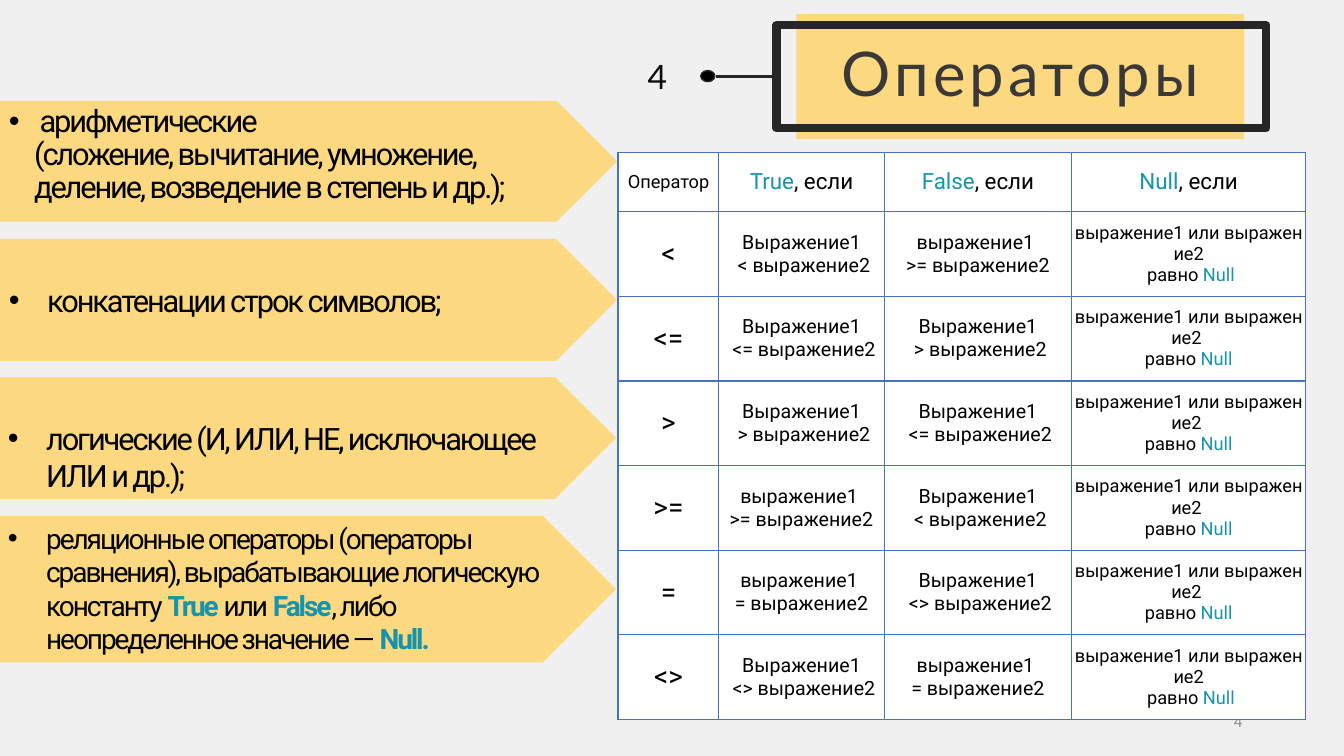
"""Builds the slide about operators: four category arrows and a comparison table."""
from dataclasses import dataclass

from lxml import etree
from pptx import Presentation
from pptx.dml.color import RGBColor
from pptx.enum import shapes, text
from pptx.oxml import ns
from pptx.util import Inches, Pt

NBSP = chr(160)


@dataclass(frozen=True)
class Theme:
    """Colours, fonts and type sizes."""
    back: str = "F0F0F0"
    accent: str = "FCD880"
    ink: str = "000000"
    title: str = "3B3838"
    dark: str = "262626"
    number: str = "0D0D0D"
    muted: str = "8C8C8C"
    keyword: str = "1794AC"
    border: str = "4472C4"
    cell: str = "FFFFFF"
    head_font: str = "Lato"
    body_font: str = "Roboto"
    foot_font: str = "Calibri"
    title_size: float = 44
    number_size: float = 24
    body_size: float = 22
    small_size: float = 20
    operator_size: float = 20
    head_size: float = 16
    cell_size: float = 14
    null_size: float = 13
    foot_size: float = 12


@dataclass(frozen=True)
class Box:
    """Position and size in inches."""
    left: float
    top: float
    width: float
    height: float

    def emu(self) -> tuple:
        """Return the box as lengths."""
        return tuple(map(Inches, (self.left, self.top, self.width, self.height)))


@dataclass(frozen=True)
class Category:
    """An arrow with one bulleted operator category."""
    box: Box
    words: str
    size: float
    indent: float = 0.38
    inset: float = 0.05
    anchor: text.MSO_ANCHOR = text.MSO_ANCHOR.TOP
    leading: float = 1


@dataclass(frozen=True)
class Comparison:
    """A table row: operator, its negation and the first words of both cases."""
    operator: str
    negation: str
    true_word: str
    false_word: str
    late_space: bool = True


T = Theme()
UPPER, LOWER = "Выражение1", "выражение1"
CATEGORIES = [
    Category(Box(-0.01, 1, 6.13, 1.2),
             " арифметические\v(сложение, вычитание, умножение, деление, возведение в степень и др.);",
             T.body_size, indent=0.25, leading=0.9),
    Category(Box(-0.01, 2.37, 6.13, 1.21), "конкатенации строк символов;",
             T.body_size, anchor=text.MSO_ANCHOR.MIDDLE),
    Category(Box(-0.02, 3.74, 6.13, 1.21),
             "логические (И, ИЛИ, НЕ, исключающее ИЛИ и др.);", T.body_size, inset=0.42),
    Category(Box(-0.02, 5.12, 6.13, 1.45),
             "реляционные операторы (операторы сравнения), вырабатывающие логическую константу "
             "|True| или |False|, либо неопределенное значение — |Null.|", T.small_size),
]
COMPARISONS = [
    Comparison("<", ">=", UPPER, LOWER, False),
    Comparison("<=", ">", UPPER, UPPER),
    Comparison(">", "<=", UPPER, UPPER),
    Comparison(">=", "<", LOWER, UPPER),
    Comparison("=", "<>", LOWER, UPPER),
    Comparison("<>", "=", UPPER, LOWER, False),
]
TABLE_BOX = Box(6.13, 1.51, 6.82, 5.63)
COLUMNS = [1, 1.64, 1.86, 2.32]
ROWS = [0.59] + [0.84] * len(COMPARISONS)


def rgb(value: str) -> RGBColor:
    """Turn a hex string into a colour."""
    return RGBColor.from_string(value)


def write(p, words: str, size: float, font: str = T.body_font, color: str = T.ink,
          align=text.PP_ALIGN.CENTER, spacing: int = 0, bold: bool = False) -> None:
    """Fill a paragraph; words between bars become keywords."""
    p.alignment = align
    p.font.size, p.font.name, p.font.color.rgb = Pt(size), font, rgb(color)
    if spacing:
        p._p.pPr.find(ns.qn("a:defRPr")).set("spc", str(spacing))
    for index, piece in enumerate(words.split("|")):
        for number, line in enumerate(piece.split("\v")):
            if number:
                p.add_line_break()
            if line:
                r = p.add_run()
                r.text = line
                if index % 2:
                    r.font.color.rgb = rgb(T.keyword)
                    r.font.bold = bold or None


def add_block(s, kind, box: Box, fill: str = "", line: str = "", weight: float = 0):
    """Add a flat preset shape."""
    sp = s.shapes.add_shape(kind, *box.emu())
    sp.shadow.inherit = False
    if fill:
        sp.fill.solid()
        sp.fill.fore_color.rgb = rgb(fill)
    else:
        sp.fill.background()
    if line:
        sp.line.color.rgb, sp.line.width = rgb(line), Pt(weight)
    else:
        sp.line.fill.background()
    return sp


def add_label(s, box: Box, words: str, size: float, font: str, color: str, align,
              anchor=text.MSO_ANCHOR.TOP) -> None:
    """Add a wrapped text box."""
    tf = s.shapes.add_textbox(*box.emu()).text_frame
    tf.word_wrap, tf.vertical_anchor = True, anchor
    write(tf.paragraphs[0], words, size, font, color, align)


def add_category(s, item: Category) -> None:
    """Add an arrow with its bullet."""
    tf = add_block(s, shapes.MSO_SHAPE.PENTAGON, item.box, T.accent).text_frame
    tf.word_wrap, tf.vertical_anchor, tf.margin_top = True, item.anchor, Inches(item.inset)
    p = tf.paragraphs[0]
    p.line_spacing = item.leading
    pr = p._p.get_or_add_pPr()
    pr.set("marL", str(Inches(item.indent)))
    pr.set("indent", str(-Inches(item.indent)))
    etree.SubElement(pr, ns.qn("a:buFont")).set("typeface", "Arial")
    etree.SubElement(pr, ns.qn("a:buChar")).set("char", "•")
    write(p, item.words, item.size, align=text.PP_ALIGN.LEFT, spacing=-150, bold=True)


def case(word: str, operator: str) -> list[str]:
    """Return the two lines of a comparison."""
    tail = f"{operator}{NBSP}выражение2"
    return [word, NBSP + tail] if word == UPPER else [word + NBSP, tail]


def null_case(late_space: bool) -> list[str]:
    """Return the two lines of the Null condition."""
    first, second = NBSP.join([LOWER, "или", "выражение2"]), f"равно{NBSP}|Null|"
    return [first + NBSP, second] if late_space else [first, NBSP + second]


def fill_cell(cell, lines: list[str], size: float) -> None:
    """Write, fill and border a table cell."""
    cell.vertical_anchor = text.MSO_ANCHOR.MIDDLE
    cell.margin_left = cell.margin_right = cell.margin_top = cell.margin_bottom = Inches(0.03)
    cell.fill.solid()
    cell.fill.fore_color.rgb = rgb(T.cell)
    for index, side in enumerate("LRTB"):
        ln = etree.Element(ns.qn(f"a:ln{side}"), w=str(Pt(1)))
        fill = etree.SubElement(ln, ns.qn("a:solidFill"))
        etree.SubElement(fill, ns.qn("a:srgbClr")).set("val", T.border)
        cell._tc.get_or_add_tcPr().insert(index, ln)
    tf = cell.text_frame
    for index, line in enumerate(lines):
        write(tf.add_paragraph() if index else tf.paragraphs[0], line, size)


def add_comparisons(s) -> None:
    """Add the table of comparison operators."""
    table = s.shapes.add_table(len(ROWS), len(COLUMNS), *TABLE_BOX.emu()).table
    table.first_row = table.horz_banding = False
    for column, width in zip(table.columns, COLUMNS):
        column.width = Inches(width)
    for row, height in zip(table.rows, ROWS):
        row.height = Inches(height)
    fill_cell(table.cell(0, 0), ["Оператор"], T.null_size)
    for index, word in enumerate(("True", "False", "Null"), 1):
        fill_cell(table.cell(0, index), [f"|{word}|,{NBSP}если"], T.head_size)
    for index, item in enumerate(COMPARISONS, 1):
        fill_cell(table.cell(index, 0), [item.operator], T.operator_size)
        fill_cell(table.cell(index, 1), case(item.true_word, item.operator), T.cell_size)
        fill_cell(table.cell(index, 2), case(item.false_word, item.negation), T.cell_size)
        fill_cell(table.cell(index, 3), null_case(item.late_space), T.null_size)


def add_frame(s) -> None:
    """Add the title frame with its pin and number."""
    add_block(s, shapes.MSO_SHAPE.RECTANGLE, Box(7.7, 0.25, 4.86, 1.02), line=T.dark, weight=6)
    add_block(s, shapes.MSO_SHAPE.FLOWCHART_CONNECTOR, Box(6.95, 0.7, 0.14, 0.11),
              T.ink, T.dark, 1)
    pin = s.shapes.add_connector(shapes.MSO_CONNECTOR.STRAIGHT, Inches(7.69), Inches(0.76),
                                 Inches(7.1), Inches(0.76))
    pin.line.color.rgb, pin.line.width = rgb(T.dark), Pt(2.25)
    etree.SubElement(pin._element.spPr, ns.qn("a:effectLst"))
    add_label(s, Box(5.24, 0.51, 2.56, 0.5), "4", T.number_size, T.head_font, T.number,
              text.PP_ALIGN.CENTER)


def main() -> None:
    """Build and save the slide."""
    prs = Presentation()
    prs.slide_width, prs.slide_height = Inches(13.33), Inches(7.5)
    s = prs.slides.add_slide(prs.slide_layouts[6])
    s.background.fill.solid()
    s.background.fill.fore_color.rgb = rgb(T.back)
    title = add_block(s, shapes.MSO_SHAPE.RECTANGLE, Box(7.9, 0.14, 4.44, 1.24), T.accent)
    p = title.text_frame.paragraphs[0]
    p.line_spacing = 0.9
    write(p, "Операторы", T.title_size, T.head_font, T.title, spacing=300)
    add_label(s, Box(9.42, 6.95, 3, 0.4), "4", T.foot_size, T.foot_font, T.muted,
              text.PP_ALIGN.RIGHT, text.MSO_ANCHOR.MIDDLE)
    add_comparisons(s)
    for item in CATEGORIES:
        add_category(s, item)
    add_frame(s)
    prs.save("out.pptx")


if __name__ == "__main__":
    main()
